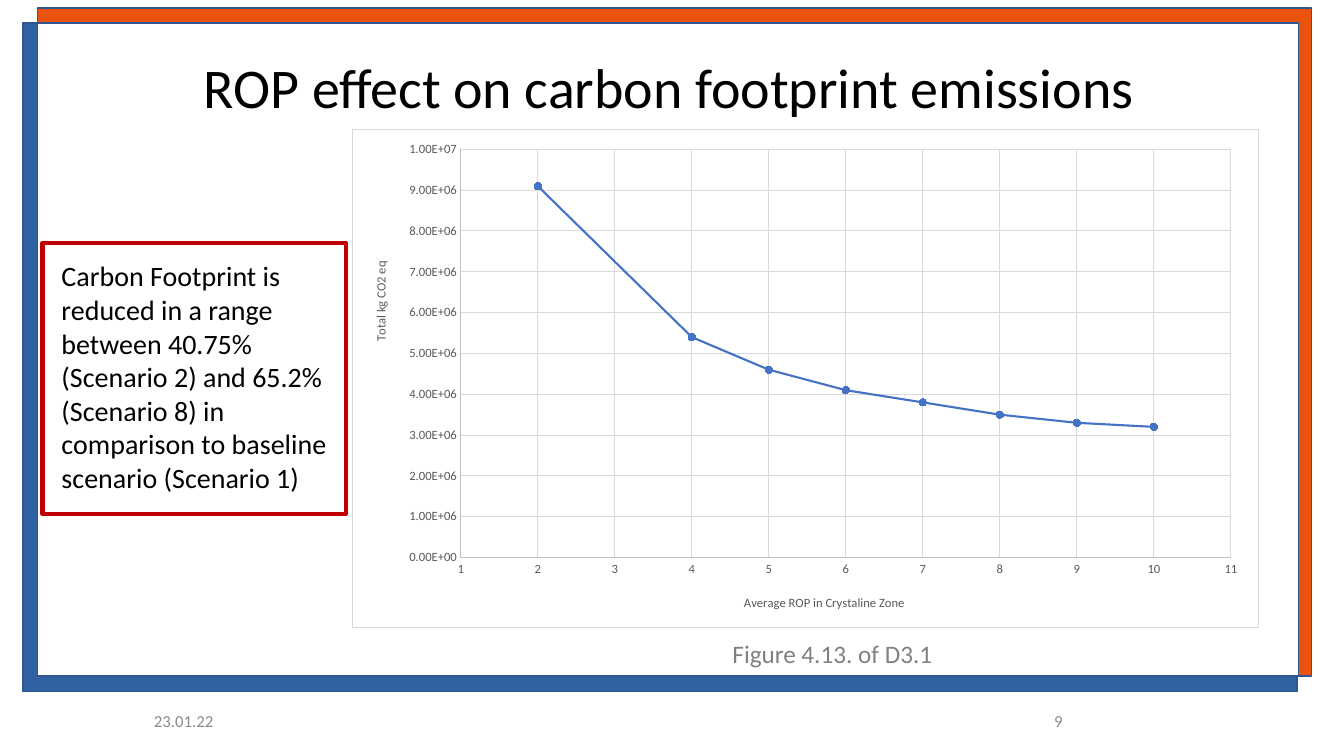
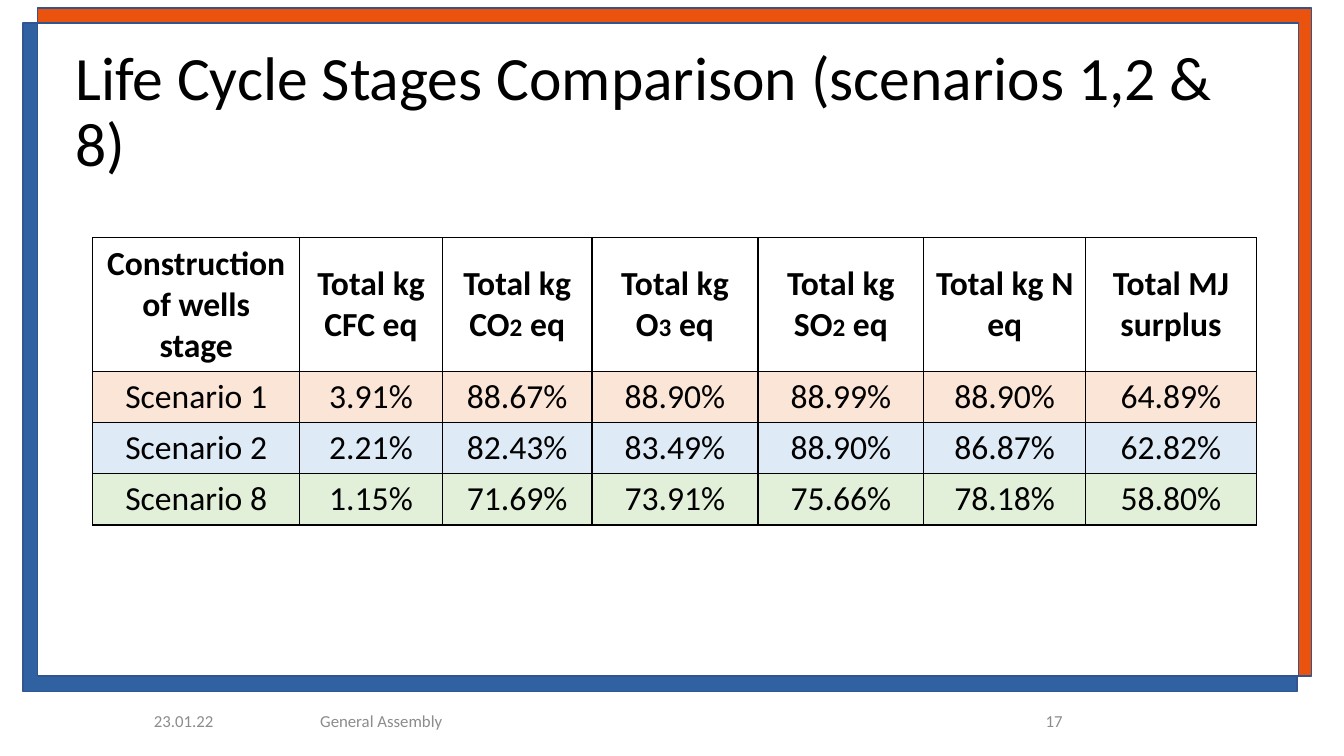
from dataclasses import dataclass

from pptx import Presentation
from pptx.chart.data import XyChartData
from pptx.dml.color import RGBColor
from pptx.enum.chart import XL_CHART_TYPE as ChartType
from pptx.enum.chart import XL_MARKER_STYLE as MarkerStyle
from pptx.enum.chart import XL_TICK_MARK as TickMark
from pptx.enum.shapes import MSO_SHAPE as ShapeKind
from pptx.enum.text import MSO_ANCHOR as Anchor
from pptx.enum.text import PP_ALIGN as Align
from pptx.oxml import parse_xml
from pptx.oxml.ns import nsdecls, qn
from pptx.oxml.xmlchemy import OxmlElement
from pptx.util import Cm, Pt


@dataclass(frozen=True)
class Theme:
    font: str = "Calibri"
    black: str = "000000"
    white: str = "FFFFFF"
    orange: str = "EA530E"
    blue: str = "3062A2"
    frame_line: str = "325491"
    footer: str = "8C8C8C"
    caption: str = "808080"
    callout: str = "C00000"
    series: str = "4472C4"
    axis_text: str = "595959"
    axis_line: str = "BFBFBF"
    grid: str = "D9D9D9"
    row_tints: tuple = ("FBE5D6", "DEEBF7", "E2F0D9")
    title_size: int = 40
    long_title_size: int = 44
    table_size: int = 24
    subscript_size: int = 18
    body_size: int = 20
    caption_size: int = 18
    footer_size: int = 12
    axis_size: int = 9


THEME = Theme()


def apply(target, values):
    for name, value in values.items():
        setattr(target, name, value)


def style_font(font, size, color, bold=False):
    apply(font, {"name": THEME.font, "size": Pt(size), "bold": bold})
    font.color.rgb = RGBColor.from_string(color)


def style_line(line, color, width):
    line.color.rgb = RGBColor.from_string(color)
    line.width = Pt(width)


def style_fill(fill, color):
    if color is None:
        fill.background()
    else:
        fill.solid()
        fill.fore_color.rgb = RGBColor.from_string(color)


def place_chart_part(parent, inner=False, **fractions):
    layout = parent.find(qn("c:layout"))
    if layout is None:
        layout = OxmlElement("c:layout")
        parent.insert(0 if parent.find(qn("c:tx")) is None else 1, layout)
    manual = OxmlElement("c:manualLayout")
    settings = {"layoutTarget": "inner"} if inner else {}
    settings.update({"xMode": "edge", "yMode": "edge"})
    settings.update(fractions)
    for name, value in settings.items():
        part = OxmlElement(f"c:{name}")
        part.set("val", str(value))
        manual.append(part)
    layout.append(manual)


class Deck:
    def __init__(self, width, height):
        self.presentation = Presentation()
        apply(self.presentation, {"slide_width": Cm(width), "slide_height": Cm(height)})
        self.slide = None

    def add_slide(self, number, footer=None):
        layout = self.presentation.slide_layouts[6]
        self.slide = self.presentation.slides.add_slide(layout)
        for box, color in (
            ((0.94, 0.2, 32.11, 16.84), THEME.orange),
            ((0.58, 0.58, 32.11, 16.84), THEME.blue),
            ((0.94, 0.58, 31.78, 16.46), THEME.white),
        ):
            self.rectangle(box, color, THEME.frame_line, 1)
        for text, left, width, align in (
            ("23.01.22", 3.63, 3.02, Align.LEFT),
            (footer, 7.82, 10.85, Align.LEFT),
            (number, 22.66, 4.37, Align.RIGHT),
        ):
            if text:
                self.text((left, 17.65, width, 1.02), text, THEME.footer_size,
                          THEME.footer, align, Anchor.MIDDLE)

    def rectangle(self, box, fill, line, line_width):
        shape = self.slide.shapes.add_shape(ShapeKind.RECTANGLE, *map(Cm, box))
        shape.shadow.inherit = False
        style_fill(shape.fill, fill)
        style_line(shape.line, line, line_width)

    def text(self, box, text, size, color=THEME.black, align=Align.LEFT,
             anchor=Anchor.TOP, wrap=True, spacing=None):
        frame = self.slide.shapes.add_textbox(*map(Cm, box)).text_frame
        apply(frame, {"word_wrap": wrap, "vertical_anchor": anchor})
        paragraph = frame.paragraphs[0]
        apply(paragraph, {"alignment": align, "line_spacing": spacing})
        run = paragraph.add_run()
        run.text = text
        style_font(run.font, size, color)

    def title(self, box, text, size, align=Align.LEFT, spacing=None):
        self.text(box, text, size, align=align, anchor=Anchor.MIDDLE, spacing=spacing)

    def axis(self, axis, title, position, values):
        apply(axis, {
            "has_major_gridlines": True,
            "major_tick_mark": TickMark.NONE,
            "minor_tick_mark": TickMark.NONE,
            **values,
        })
        style_line(axis.format.line, THEME.axis_line, 0.75)
        style_line(axis.major_gridlines.format.line, THEME.grid, 0.75)
        style_font(axis.tick_labels.font, THEME.axis_size, THEME.axis_text)
        run = axis.axis_title.text_frame.paragraphs[0].add_run()
        run.text = title
        style_font(run.font, THEME.axis_size, THEME.axis_text)
        place_chart_part(axis.axis_title._element, **position)

    def scatter(self, box, points, x_axis, y_axis, number_format):
        data = XyChartData(number_format=number_format)
        data_series = data.add_series("Series 1")
        for x, y in points:
            data_series.add_data_point(x, y)
        chart = self.slide.shapes.add_chart(
            ChartType.XY_SCATTER_SMOOTH, *map(Cm, box), data).chart
        apply(chart, {"has_legend": False, "has_title": False})
        style_font(chart.font, 10, THEME.black)
        chart.plots[0].vary_by_categories = False
        self.axis(chart.category_axis, *x_axis)
        self.axis(chart.value_axis, *y_axis)
        labels = chart.value_axis.tick_labels
        apply(labels, {"number_format": number_format, "number_format_is_linked": False})

        series = chart.plots[0].series[0]
        series.smooth = True
        style_line(series.format.line, THEME.series, 1.5)
        apply(series.marker, {"style": MarkerStyle.CIRCLE, "size": 5})
        style_fill(series.marker.format.fill, THEME.series)
        style_line(series.marker.format.line, THEME.series, 0.75)

        body = chart._chartSpace.find(qn("c:chart"))
        place_chart_part(body.find(qn("c:plotArea")), inner=True,
                         x=0.12, y=0.04, w=0.85, h=0.82)
        body.addnext(parse_xml(
            f'<c:spPr {nsdecls("c", "a")}>'
            f'<a:solidFill><a:srgbClr val="{THEME.white}"/></a:solidFill>'
            f'<a:ln w="{Pt(0.75)}"><a:solidFill><a:srgbClr val="{THEME.grid}"/>'
            '</a:solidFill></a:ln></c:spPr>'))

    def cell(self, cell, text, fill, bold):
        properties = cell._tc.get_or_add_tcPr()
        for side in "LRTB":
            properties.append(parse_xml(
                f'<a:ln{side} {nsdecls("a")} w="{Pt(1)}"><a:solidFill>'
                f'<a:srgbClr val="{THEME.black}"/></a:solidFill></a:ln{side}>'))
        style_fill(cell.fill, fill)
        cell.vertical_anchor = Anchor.MIDDLE
        paragraph = cell.text_frame.paragraphs[0]
        paragraph.alignment = Align.CENTER
        for index, part in enumerate(text.split("|")):
            run = paragraph.add_run()
            run.text = part
            size = THEME.subscript_size if index % 2 else THEME.table_size
            style_font(run.font, size, THEME.black, bold)

    def table(self, left, top, widths, heights, rows):
        table = self.slide.shapes.add_table(
            len(rows), len(widths), Cm(left), Cm(top),
            Cm(sum(widths)), Cm(sum(heights))).table
        table.horz_banding = False
        for column, width in zip(table.columns, widths):
            column.width = Cm(width)
        fills = (THEME.white, *THEME.row_tints)
        for row, height, texts, fill in zip(table.rows, heights, rows, fills):
            row.height = Cm(height)
            for cell, text in zip(row.cells, texts):
                self.cell(cell, text, fill, bold=texts is rows[0])


def add_emissions_slide(deck):
    deck.add_slide("9")
    deck.title((2.77, 1.02, 28.17, 2.31), "ROP effect on carbon footprint emissions",
               THEME.title_size, Align.CENTER)
    points = zip(
        (2, 4, 5, 6, 7, 8, 9, 10),
        (9.1e6, 5.4e6, 4.6e6, 4.1e6, 3.8e6, 3.5e6, 3.3e6, 3.2e6))
    deck.scatter(
        (8.86, 3.25, 22.86, 12.57), points,
        ("Average ROP in Crystaline Zone", {"x": 0.43, "y": 0.93},
         {"minimum_scale": 1, "maximum_scale": 11, "major_unit": 1}),
        ("Total kg CO2 eq", {"x": 0.02, "y": 0.26},
         {"minimum_scale": 0, "maximum_scale": 1e7, "major_unit": 1e6}),
        "0.00E+00")
    deck.text((18.21, 15.95, 5.61, 1.02), "Figure 4.13. of D3.1",
              THEME.caption_size, THEME.caption, wrap=False)
    deck.text((1.3, 6.4, 7.72, 6.25),
              "Carbon Footprint is reduced in a range between 40.75% (Scenario 2) "
              "and 65.2% (Scenario 8) in comparison to baseline scenario (Scenario 1)",
              THEME.body_size)
    deck.rectangle((1.07, 6.12, 7.65, 6.83), None, THEME.callout, 3)


def add_stages_slide(deck):
    deck.add_slide("17", "General Assembly")
    deck.title((1.65, 1.02, 30.56, 3.68),
               "Life Cycle Stages Comparison (scenarios 1,2 & 8)",
               THEME.long_title_size, spacing=0.9)
    deck.table(
        2.34, 5.99, (5.21, 3.6, 3.77, 4.18, 4.18, 4.08, 4.3), (3.37, 1.29, 1.29, 1.29),
        (
            ("Construction of wells stage", "Total kg CFC eq", "Total kg CO|2| eq",
             "Total kg O|3| eq", "Total kg SO|2| eq", "Total kg N eq",
             "Total MJ surplus"),
            ("Scenario 1", "3.91%", "88.67%", "88.90%", "88.99%", "88.90%", "64.89%"),
            ("Scenario 2", "2.21%", "82.43%", "83.49%", "88.90%", "86.87%", "62.82%"),
            ("Scenario 8", "1.15%", "71.69%", "73.91%", "75.66%", "78.18%", "58.80%"),
        ))


def main():
    deck = Deck(33.87, 19.05)
    add_emissions_slide(deck)
    add_stages_slide(deck)
    deck.presentation.save("out.pptx")


if __name__ == "__main__":
    main()
